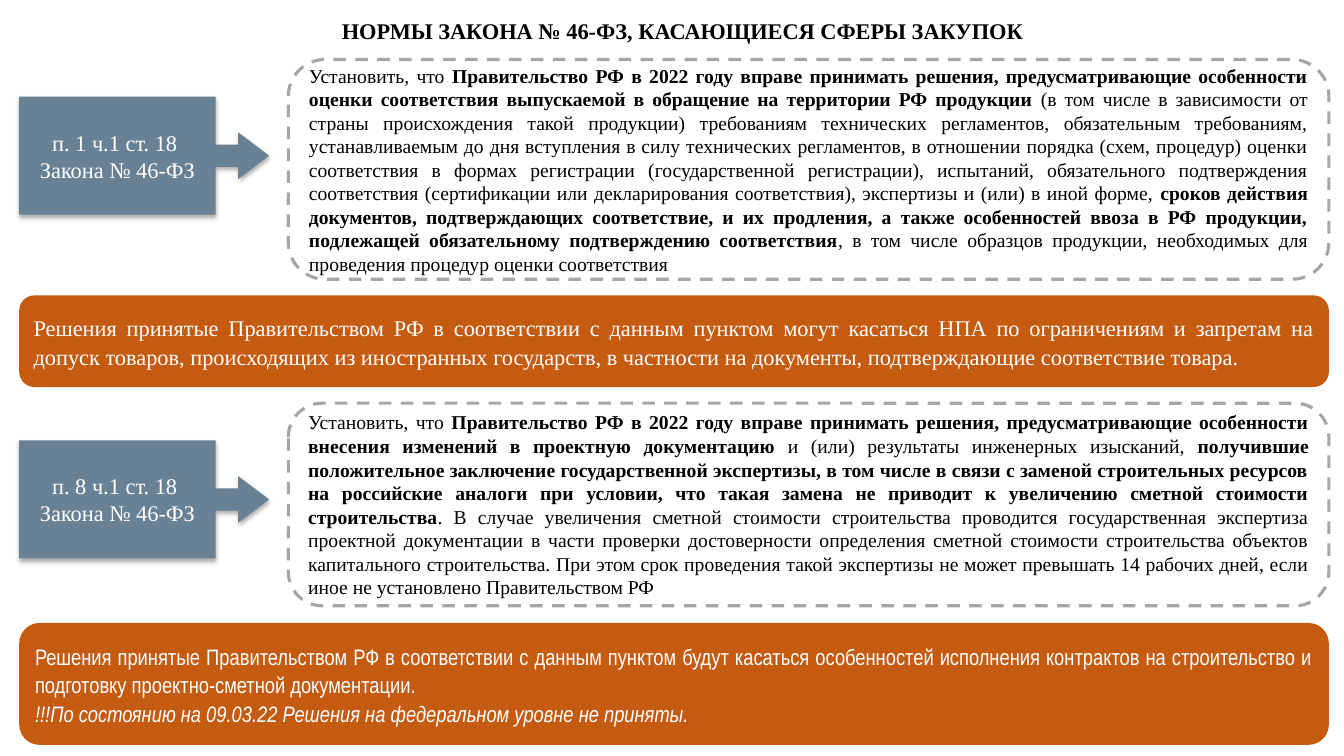
from dataclasses import dataclass

from lxml import etree
from pptx import Presentation
from pptx.dml.color import RGBColor
from pptx.enum import dml, shapes, text
from pptx.oxml import ns
from pptx.util import Inches, Pt

TITLE = "НОРМЫ ЗАКОНА № 46-ФЗ, КАСАЮЩИЕСЯ СФЕРЫ ЗАКУПОК"

# Each norm alternates regular and bold passages, starting with regular.
NORMS = [
    {
        "top": 0.59, "height": 2.18,
        "source": ["п. 1 ч.1 ст. 18 ", "Закона № 46-ФЗ"],
        "passages": [
            "Установить, что ",
            "Правительство РФ в 2022 году вправе принимать решения, "
            "предусматривающие особенности оценки соответствия выпускаемой "
            "в обращение на территории РФ продукции ",
            "(в том числе в зависимости от страны происхождения такой продукции) "
            "требованиям технических регламентов, обязательным требованиям, "
            "устанавливаемым до дня вступления в силу технических регламентов, "
            "в отношении порядка (схем, процедур) оценки соответствия в формах "
            "регистрации (государственной регистрации), испытаний, обязательного "
            "подтверждения соответствия (сертификации или декларирования "
            "соответствия), экспертизы и (или) в иной форме, ",
            "сроков действия документов, подтверждающих соответствие, и их "
            "продления, а также особенностей ввоза в РФ продукции, подлежащей "
            "обязательному подтверждению соответствия",
            ", в том числе образцов продукции, необходимых для проведения "
            "процедур оценки соответствия",
        ],
    },
    {
        "top": 4.0, "height": 2.01,
        "source": ["п. 8 ч.1 ст. 18 ", "Закона № 46-ФЗ"],
        "passages": [
            "Установить, что ",
            "Правительство РФ в 2022 году вправе принимать решения, "
            "предусматривающие особенности внесения изменений в проектную "
            "документацию ",
            "и (или) результаты инженерных изысканий, ",
            "получившие положительное заключение государственной экспертизы, "
            "в том числе в связи с заменой строительных ресурсов на российские "
            "аналоги при условии, что такая замена не приводит к увеличению "
            "сметной стоимости строительства",
            ". В случае увеличения сметной стоимости строительства проводится "
            "государственная экспертиза проектной документации в части проверки "
            "достоверности определения сметной стоимости строительства объектов "
            "капитального строительства. При этом срок проведения такой экспертизы "
            "не может превышать 14 рабочих дней, если иное не установлено "
            "Правительством РФ",
        ],
    },
]

# Each conclusion lists its paragraphs as (text, italic).
CONCLUSIONS = [
    {
        "top": 2.93, "height": 0.91, "font": "Times New Roman",
        "lines": [
            ("Решения принятые Правительством РФ в соответствии с данным пунктом "
             "могут касаться НПА по ограничениям и запретам на допуск товаров, "
             "происходящих из иностранных государств, в частности на документы, "
             "подтверждающие соответствие товара. ", False),
        ],
    },
    {
        "top": 6.18, "height": 1.21, "font": "Arial Narrow",
        "lines": [
            ("Решения принятые Правительством РФ в соответствии с данным пунктом "
             "будут касаться особенностей исполнения контрактов на строительство "
             "и подготовку проектно-сметной документации. ", False),
            ("!!!По состоянию на 09.03.22 Решения на федеральном уровне "
             "не приняты.", True),
        ],
    },
]


@dataclass(frozen=True)
class Theme:
    font: str = "Times New Roman"
    dark: str = "000000"
    light: str = "FFFFFF"
    dash: str = "A6A6A6"
    accent: str = "C55A11"
    callout: str = "698195"
    large: int = 16
    body: int = 14


THEME = Theme()
LEFT, RIGHT = 0.19, 13.18
PANEL_LEFT = 2.86
CALLOUT_WIDTH, CALLOUT_HEIGHT, CALLOUT_DROP = 2.48, 1.17, 0.37
CALLOUT_ADJUSTMENTS = (0.189, 0.198, 0.263, 0.786)


def add_span(para, words, size, color, font=THEME.font, bold=False, italic=False):
    span = para.add_run()
    span.text = words
    span.font.name = font
    span.font.size = Pt(size)
    span.font.color.rgb = RGBColor.from_string(color)
    span.font.bold = bold
    span.font.italic = italic


def add_paragraphs(box, count, align, spacing=1.0):
    """Prepare the text frame of a box and return its paragraphs."""
    frame = box.text_frame
    frame.word_wrap = True
    frame.vertical_anchor = text.MSO_ANCHOR.MIDDLE
    paras = [frame.paragraphs[0]] + [frame.add_paragraph() for _ in range(count - 1)]
    for para in paras:
        para.alignment = align
        para.line_spacing = spacing
    return paras


def add_box(slide, kind, left, top, width, height, fill=None):
    box = slide.shapes.add_shape(
        kind, Inches(left), Inches(top), Inches(width), Inches(height))
    box.shadow.inherit = False
    box.line.fill.background()
    if fill:
        box.fill.solid()
        box.fill.fore_color.rgb = RGBColor.from_string(fill)
    else:
        box.fill.background()
    return box


def add_soft_shadow(box):
    effects = box._element.spPr.find(ns.qn("a:effectLst"))
    shadow = etree.SubElement(
        effects, ns.qn("a:outerShdw"), blurRad=str(Pt(3.5)), dist=str(Pt(2.2)),
        dir="5400000", algn="t", rotWithShape="0")
    color = etree.SubElement(shadow, ns.qn("a:srgbClr"), val=THEME.dark)
    etree.SubElement(color, ns.qn("a:alpha"), val="32000")


def add_title(slide):
    title = slide.shapes.title
    title.left, title.top = Inches(0.36), Inches(0.05)
    title.width, title.height = Inches(12.82), Inches(0.44)
    para = add_paragraphs(title, 1, text.PP_ALIGN.CENTER, 0.9)[0]
    title.text_frame.vertical_anchor = text.MSO_ANCHOR.BOTTOM
    title.text_frame.auto_size = text.MSO_AUTO_SIZE.NONE
    add_span(para, TITLE, THEME.large, THEME.dark, bold=True)


def add_norm(slide, norm):
    panel = add_box(slide, shapes.MSO_SHAPE.ROUNDED_RECTANGLE, PANEL_LEFT,
                    norm["top"], RIGHT - PANEL_LEFT, norm["height"])
    panel.line.color.rgb = RGBColor.from_string(THEME.dash)
    panel.line.width = Pt(2.25)
    panel.line.dash_style = dml.MSO_LINE.DASH
    para = add_paragraphs(panel, 1, text.PP_ALIGN.JUSTIFY)[0]
    for index, passage in enumerate(norm["passages"]):
        add_span(para, passage, THEME.body, THEME.dark, bold=index % 2 == 1)

    callout = add_box(slide, shapes.MSO_SHAPE.RIGHT_ARROW_CALLOUT, LEFT,
                      norm["top"] + CALLOUT_DROP, CALLOUT_WIDTH, CALLOUT_HEIGHT,
                      THEME.callout)
    for index, value in enumerate(CALLOUT_ADJUSTMENTS):
        callout.adjustments[index] = value
    add_soft_shadow(callout)
    paras = add_paragraphs(callout, len(norm["source"]), text.PP_ALIGN.CENTER)
    for para, words in zip(paras, norm["source"]):
        add_span(para, words, THEME.large, THEME.light)


def add_conclusion(slide, conclusion):
    band = add_box(slide, shapes.MSO_SHAPE.ROUNDED_RECTANGLE, LEFT,
                   conclusion["top"], RIGHT - LEFT, conclusion["height"], THEME.accent)
    lines = conclusion["lines"]
    paras = add_paragraphs(band, len(lines), text.PP_ALIGN.JUSTIFY, 1.07)
    for para, (words, italic) in zip(paras, lines):
        add_span(para, words, THEME.large, THEME.light, conclusion["font"], italic=italic)


def main():
    deck = Presentation()
    deck.slide_width, deck.slide_height = Inches(13.33), Inches(7.5)
    page = deck.slides.add_slide(deck.slide_layouts[5])
    add_title(page)
    for norm, conclusion in zip(NORMS, CONCLUSIONS):
        add_norm(page, norm)
        add_conclusion(page, conclusion)
    deck.save("out.pptx")


if __name__ == "__main__":
    main()
